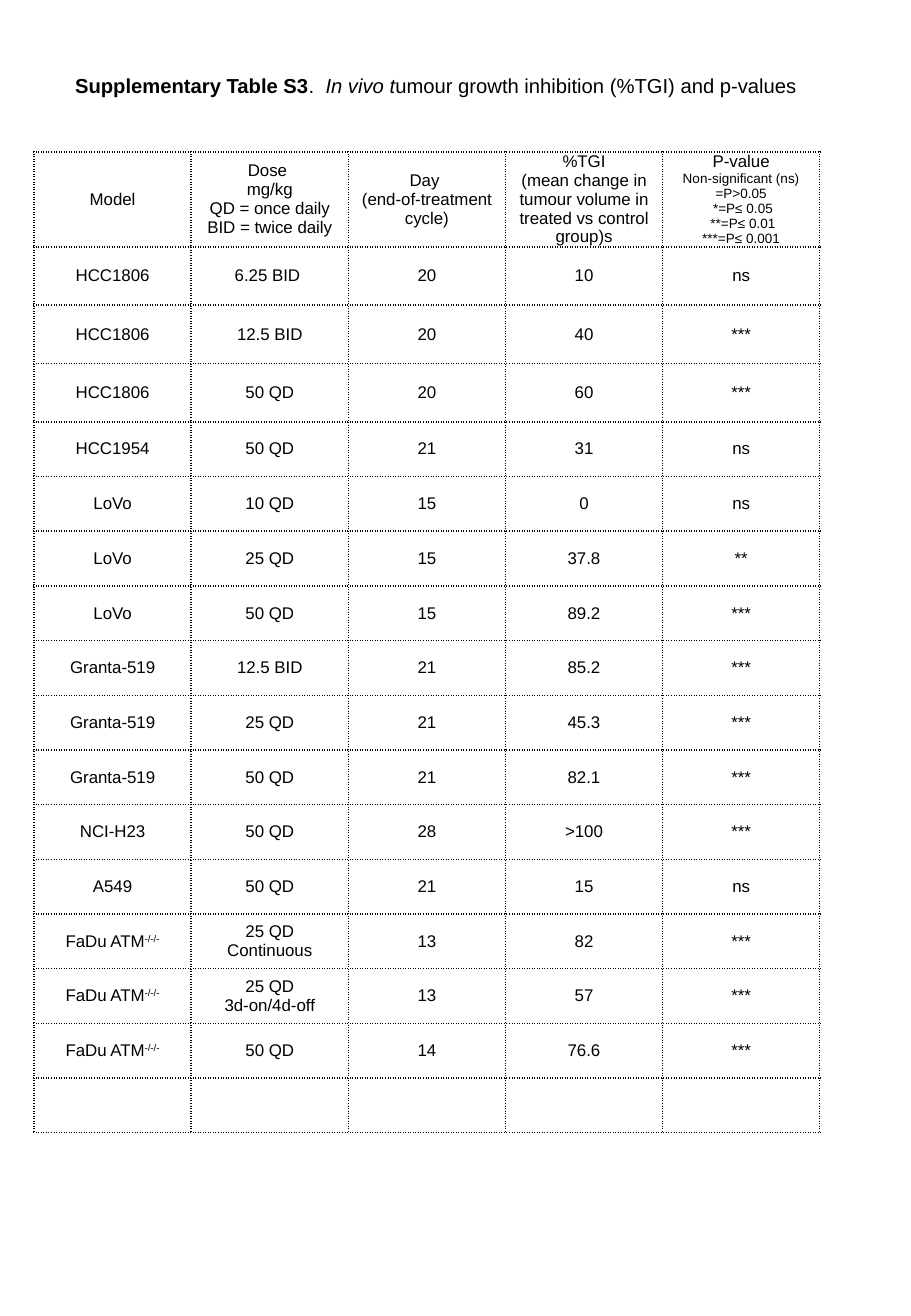
from lxml.etree import SubElement
from pptx import Presentation
from pptx.dml.color import RGBColor
from pptx.enum.text import MSO_ANCHOR as ANCHOR, PP_ALIGN as ALIGN
from pptx.oxml.ns import qn
from pptx.util import Inches, Pt

COLORS = {"ink": "000000"}
FONT = "Arial"
TITLE = [("Supplementary Table S3", True, False), (".  ", False, False),
         ("In vivo t", False, True),
         ("umour growth inhibition (%TGI) and p-values", False, False)]
HEADER = ["Model",
          "Dose \nmg/kg\nQD = once daily\nBID = twice daily",
          "Day \n(end-of-treatment cycle)",
          "%TGI\n(mean change in tumour volume in treated vs control group)s",
          "P-value\nNon-significant (ns) =P>0.05\n *=P≤ 0.05\n **=P≤ 0.01\n***=P≤ 0.001"]
RESULTS = [
    ["HCC1806", "6.25 BID ", "20", "10", "ns"],
    ["HCC1806", "12.5 BID", "20", "40", "***"],
    ["HCC1806", "50 QD", "20", "60", "***"],
    ["HCC1954", "50 QD", "21", "31", "ns"],
    ["LoVo", "10 QD", "15", "0", "ns"],
    ["LoVo", "25 QD", "15", "37.8", "**"],
    ["LoVo", "50 QD", "15", "89.2", "***"],
    ["Granta-519", "12.5 BID", "21", "85.2", "***"],
    ["Granta-519", "25 QD", "21", "45.3", "***"],
    ["Granta-519", "50 QD", "21", "82.1", "***"],
    ["NCI-H23", "50 QD", "28", ">100", "***"],
    ["A549", "50 QD", "21", "15", "ns"],
    ["FaDu ATM^-/-/-", "25 QD\nContinuous", "13", "82", "***"],
    ["FaDu ATM^-/-/-", "25 QD\n3d-on/4d-off", "13", "57", "***"],
    ["FaDu ATM^-/-/-", "50 QD", "14", "76.6", "***"],
    [""] * 5,
]
ROW, TALL_ROW, TALL_ROWS = 0.45, 0.48, (1, 2, 3)


def add_run(p, text, size):
    """Add a run in the slide's font and ink colour."""
    r = p.add_run()
    r.text = text
    r.font.name, r.font.size = FONT, Pt(size)
    r.font.color.rgb = RGBColor.from_string(COLORS["ink"])
    return r


def set_borders(cell):
    """Give a cell dotted borders on all four sides."""
    tc_pr = cell._tc.get_or_add_tcPr()
    for i, side in enumerate(("lnL", "lnR", "lnT", "lnB")):
        ln = SubElement(tc_pr, qn(f"a:{side}"), w=str(Pt(1)))
        fill = SubElement(ln, qn("a:solidFill"))
        SubElement(fill, qn("a:srgbClr"), val=COLORS["ink"])
        SubElement(ln, qn("a:prstDash"), val="sysDot")
        tc_pr.insert(i, ln)


def fill_cell(cell, text, note_size=10):
    """Write centred lines; a caret starts a superscript, later lines use note_size."""
    cell.fill.background()
    set_borders(cell)
    if not text:
        return
    cell.vertical_anchor = ANCHOR.MIDDLE
    cell.margin_left = cell.margin_right = cell.margin_top = cell.margin_bottom = 0
    tf = cell.text_frame
    for i, line in enumerate(text.split("\n")):
        p = tf.add_paragraph() if i else tf.paragraphs[0]
        p.alignment = ALIGN.CENTER
        base, _, power = line.partition("^")
        add_run(p, base, note_size if i else 10)
        if power:
            r = add_run(p, power, 10)
            r.font._element.set("baseline", "30000")


def add_title(s, x, y, w, h):
    """Place the table caption in the given box."""
    tf = s.shapes.add_textbox(*map(Inches, (x, y, w, h))).text_frame
    tf.word_wrap = True
    p = tf.paragraphs[0]
    p.line_spacing = 0.9
    for text, bold, italic in TITLE:
        r = add_run(p, text, 12)
        r.font.bold, r.font.italic = bold, italic


def add_results(s, x, y, w, h):
    """Place the results table with equal columns in the given box."""
    rows = [HEADER] + RESULTS
    box = map(Inches, (x, y, w, h))
    table = s.shapes.add_table(len(rows), len(HEADER), *box).table
    table.first_row = table.horz_banding = False
    for i, values in enumerate(rows):
        table.rows[i].height = Inches(TALL_ROW if i in TALL_ROWS else ROW)
        for j, text in enumerate(values):
            fill_cell(table.cell(i, j), text, 8 if (i, j) == (0, 4) else 10)


def main():
    """Build and save the slide."""
    prs = Presentation()
    prs.slide_width, prs.slide_height = Inches(7.5), Inches(10.83)
    s = prs.slides.add_slide(prs.slide_layouts[6])
    add_results(s, 0.28, 1.25, 6.47, 8.09)
    add_title(s, 0.52, 0.58, 6.47, 0.55)
    prs.save("out.pptx")


if __name__ == "__main__":
    main()
